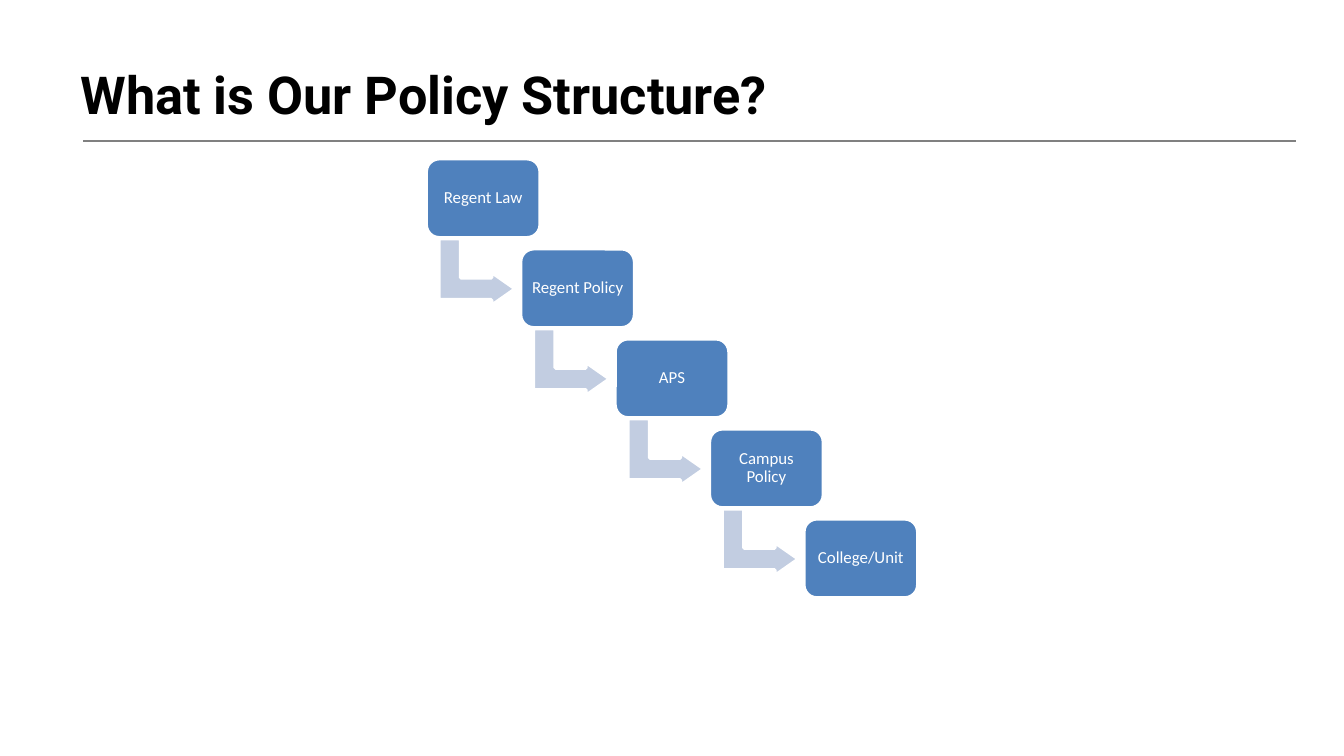
from lxml import etree
from pptx import Presentation
from pptx.dml.color import RGBColor
from pptx.enum.shapes import MSO_CONNECTOR, MSO_SHAPE
from pptx.enum.text import MSO_ANCHOR, PP_ALIGN
from pptx.oxml.ns import qn
from pptx.util import Inches, Pt

BLACK = RGBColor(0x00, 0x00, 0x00)
WHITE = RGBColor(0xFF, 0xFF, 0xFF)
GRAY = RGBColor(0x80, 0x80, 0x80)
BLUE = RGBColor(0x4F, 0x81, 0xBD)
PALE_BLUE = RGBColor(0xC2, 0xCD, 0xE1)

SLIDE_WIDTH = Inches(10)
SLIDE_HEIGHT = SLIDE_WIDTH * 9 // 16

POLICY_LEVELS = ["Regent Law", "Regent Policy", "APS", "Campus Policy", "College/Unit"]
LEVEL_WIDTH, LEVEL_HEIGHT = 0.85, 0.59
ARROW_WIDTH, ARROW_HEIGHT = 0.5, 0.57


def format_text(paragraph, font_name, size, color, bold=False):
    font = paragraph.runs[0].font
    font.name, font.size, font.bold = font_name, Pt(size), bold
    font.color.rgb = color


def add_heading(slide, left, top, width, height):
    """Place the title and the rule that runs below it."""
    title = slide.shapes.add_textbox(*map(Inches, (left, top, width, height)))
    frame = title.text_frame
    frame.word_wrap = True
    frame.vertical_anchor = MSO_ANCHOR.MIDDLE
    frame.text = "What is Our Policy Structure?"
    format_text(frame.paragraphs[0], "Roboto", 28, BLACK, bold=True)

    rule_y = Inches(top + height - 0.12)
    rule = slide.shapes.add_connector(
        MSO_CONNECTOR.STRAIGHT,
        Inches(left + 0.12), rule_y, Inches(left + width + 0.14), rule_y)
    rule.line.color.rgb = GRAY
    rule.line.width = Pt(0.75)
    etree.SubElement(rule._element.spPr, qn("a:effectLst"))


def add_block(slide, preset, left, top, width, height, fill):
    block = slide.shapes.add_shape(preset, *map(Inches, (left, top, width, height)))
    block.shadow.inherit = False
    block.fill.solid()
    block.fill.fore_color.rgb = fill
    block.line.color.rgb = WHITE
    block.line.width = Pt(2)
    return block


def add_level(slide, name, left, top):
    level = add_block(slide, MSO_SHAPE.ROUNDED_RECTANGLE, left, top,
                      LEVEL_WIDTH, LEVEL_HEIGHT, BLUE)
    frame = level.text_frame
    frame.word_wrap = True
    frame.vertical_anchor = MSO_ANCHOR.MIDDLE
    frame.margin_left = frame.margin_right = Inches(0.04)
    frame.margin_top = frame.margin_bottom = Inches(0.04)
    frame.text = name
    paragraph = frame.paragraphs[0]
    paragraph.alignment = PP_ALIGN.CENTER
    paragraph.line_spacing = 0.9
    format_text(paragraph, "Calibri", 9, WHITE)


def add_step_arrow(slide, left, top):
    """Place the arrow that leads from the level at left, top to the next."""
    arrow = add_block(slide, MSO_SHAPE.BENT_UP_ARROW, left + 0.13, top + 0.56,
                      ARROW_WIDTH, ARROW_HEIGHT, PALE_BLUE)
    arrow.rotation = 90
    for index, value in enumerate((0.328, 0.25, 0.358)):
        arrow.adjustments[index] = value


def add_staircase(slide, left, top, width, height):
    """Spread the policy levels evenly down the diagonal of the box."""
    last = len(POLICY_LEVELS) - 1
    step_x = (width - LEVEL_WIDTH) / last
    step_y = (height - LEVEL_HEIGHT) / last
    for index, name in enumerate(POLICY_LEVELS):
        x, y = left + index * step_x, top + index * step_y
        if index < last:
            add_step_arrow(slide, x, y)
        add_level(slide, name, x, y)


def main():
    deck = Presentation()
    deck.slide_width, deck.slide_height = SLIDE_WIDTH, SLIDE_HEIGHT
    slide = deck.slides.add_slide(deck.slide_layouts[6])
    add_heading(slide, 0.5, 0.23, 9, 0.94)
    add_staircase(slide, 3.17, 1.18, 3.66, 3.27)
    deck.save("out.pptx")


if __name__ == "__main__":
    main()
